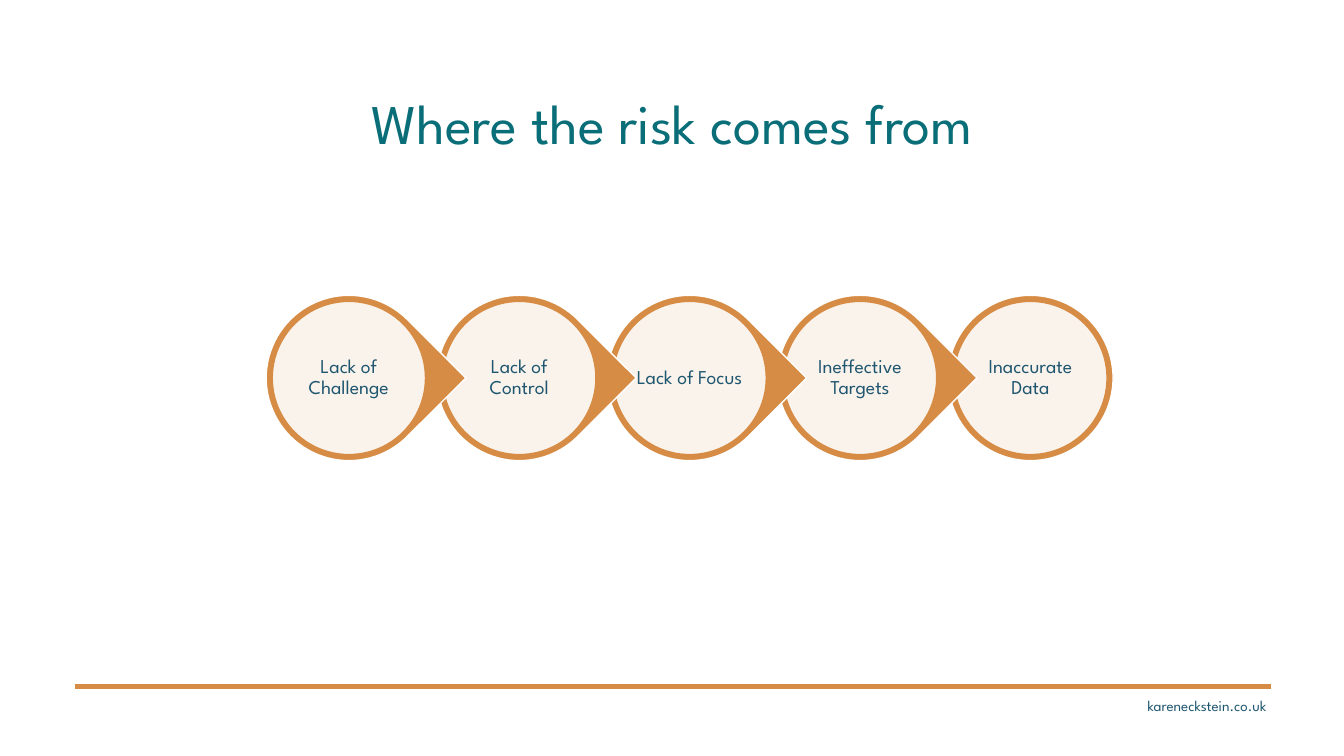
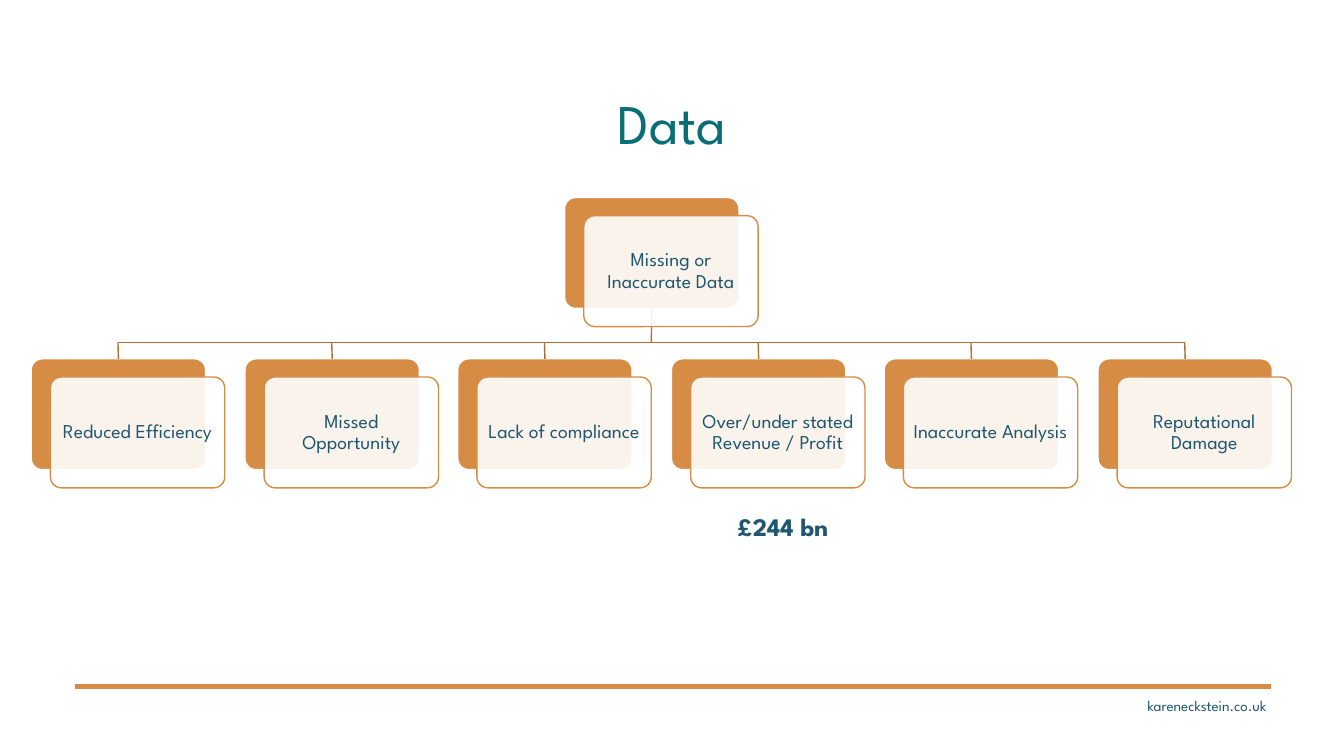
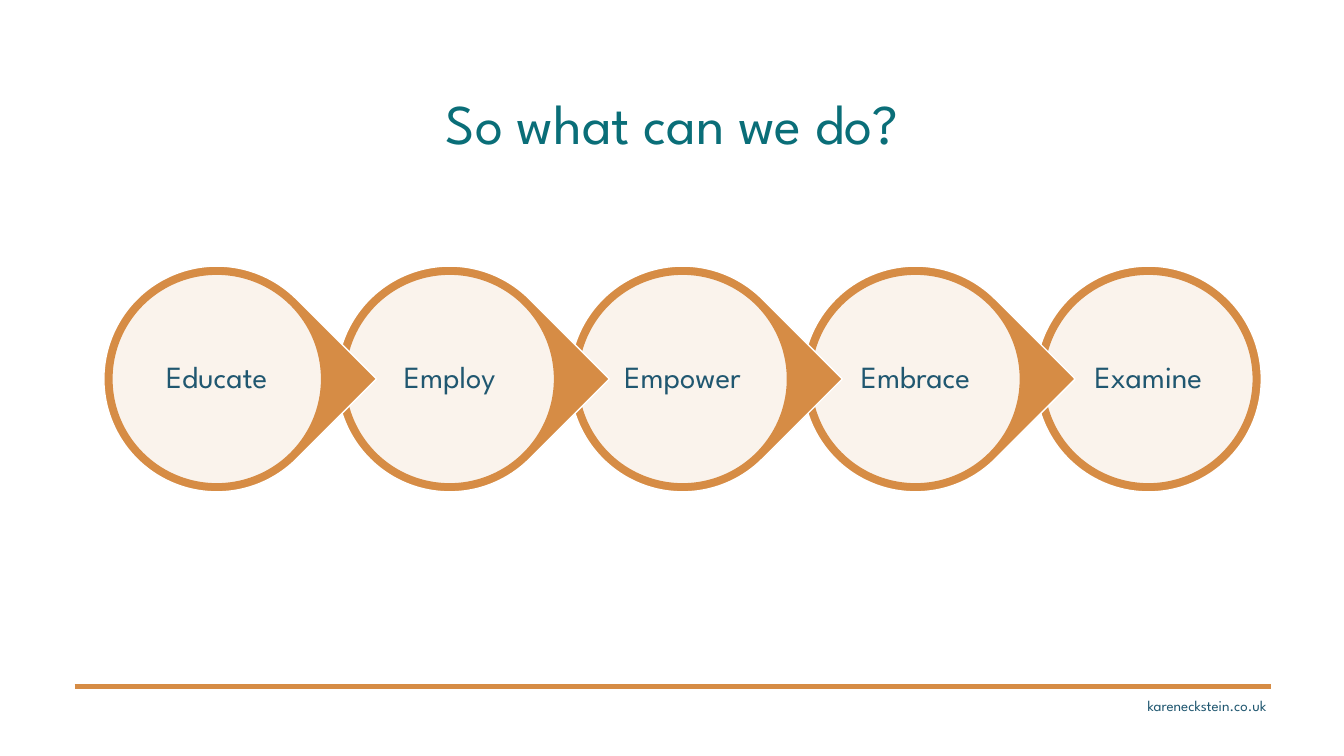
from lxml import etree
from pptx import Presentation
from pptx.dml.color import RGBColor
from pptx.enum.shapes import MSO_CONNECTOR, MSO_SHAPE
from pptx.enum.text import MSO_ANCHOR, MSO_AUTO_SIZE, PP_ALIGN
from pptx.oxml.ns import qn
from pptx.util import Pt

PX = 9144  # EMU: one hundredth of an inch
FONT = "League Spartan"
ORANGE = RGBColor(0xD6, 0x8C, 0x45)
BROWN = RGBColor(0xAB, 0x70, 0x37)
NAVY = RGBColor(0x20, 0x57, 0x70)
TEAL = RGBColor(0x0A, 0x6E, 0x78)
WHITE = RGBColor(0xFF, 0xFF, 0xFF)

ELLIPSE = MSO_SHAPE.OVAL
TEARDROP = MSO_SHAPE.TEAR
ROUNDED = MSO_SHAPE.ROUNDED_RECTANGLE
STRAIGHT = MSO_CONNECTOR.STRAIGHT
CENTER, RIGHT = PP_ALIGN.CENTER, PP_ALIGN.RIGHT
TOP, MIDDLE, BOTTOM = MSO_ANCHOR.TOP, MSO_ANCHOR.MIDDLE, MSO_ANCHOR.BOTTOM
NO_AUTOFIT = MSO_AUTO_SIZE.NONE

TITLE_ONLY = 5
TOP_SIDE, BOTTOM_SIDE = 0, 2


class Deck:
    """Holds the presentation style and the slide being drawn."""

    def __init__(self):
        self.presentation = Presentation()
        self.presentation.slide_width = 1333 * PX
        self.presentation.slide_height = 750 * PX
        self.slide = None

    def new_slide(self, title):
        layout = self.presentation.slide_layouts[TITLE_ONLY]
        self.slide = self.presentation.slides.add_slide(layout)
        self.line(74, 681, 1261, 681, ORANGE, 3)
        self.text_box(1101, 686, 165, 28, "kareneckstein.co.uk", 10.7, RIGHT)
        shape = self.slide.shapes.title
        shape.left, shape.top = 72 * PX, 112 * PX
        shape.width, shape.height = 1189 * PX, 48 * PX
        self.set_text(shape, title, 40, color=TEAL, anchor=BOTTOM, spacing=0.9)

    def set_text(self, shape, text, size, align=CENTER, color=NAVY, bold=False,
                 anchor=TOP, spacing=1.0):
        frame = shape.text_frame
        frame.word_wrap = True
        frame.auto_size = NO_AUTOFIT
        frame.vertical_anchor = anchor
        frame.text = text
        paragraph = frame.paragraphs[0]
        paragraph.alignment = align
        paragraph.line_spacing = spacing
        font = paragraph.font
        font.name, font.size, font.bold = FONT, Pt(size), bold
        font.color.rgb = color

    def text_box(self, left, top, width, height, text, size, align=CENTER, bold=False):
        box = self.slide.shapes.add_textbox(left * PX, top * PX, width * PX, height * PX)
        self.set_text(box, text, size, align, bold=bold)

    def line(self, x1, y1, x2, y2, color=BROWN, width=1):
        connector = self.slide.shapes.add_connector(
            STRAIGHT, x1 * PX, y1 * PX, x2 * PX, y2 * PX)
        connector.line.color.rgb = color
        connector.line.width = Pt(width)
        etree.SubElement(connector._element.spPr, qn("a:effectLst"))
        return connector

    def shape(self, kind, left, top, width, height, fill, outline):
        shape = self.slide.shapes.add_shape(
            kind, left * PX, top * PX, width * PX, height * PX)
        shape.shadow.inherit = False
        shape.fill.solid()
        shape.fill.fore_color.rgb = fill
        shape.line.color.rgb = outline
        shape.line.width = Pt(1)
        if kind == ROUNDED:
            shape.adjustments[0] = 0.1
        return shape

    def backing(self, kind, left, top, width, height):
        return self.shape(kind, left, top, width, height, ORANGE, WHITE)

    def face(self, kind, left, top, width, height, text, size, inset):
        """Draw a nearly opaque white shape that carries a label."""
        shape = self.shape(kind, left, top, width, height, WHITE, ORANGE)
        color = shape._element.spPr.find(f"{qn('a:solidFill')}/{qn('a:srgbClr')}")
        etree.SubElement(color, qn("a:alpha"), val="90000")
        frame = shape.text_frame
        frame.margin_left = frame.margin_right = inset * PX
        frame.margin_top = frame.margin_bottom = inset * PX
        self.set_text(shape, text, size, anchor=MIDDLE, spacing=0.9)

    def chain(self, labels, left, top, diameter, pitch, size):
        """Draw circles from right to left, each but the last pointing onwards."""
        rim = round(diameter / 28)
        inner = diameter - 2 * rim
        last = len(labels) - 1
        for index in range(last, -1, -1):
            x = left + index * pitch
            kind = ELLIPSE if index == last else TEARDROP
            drop = self.backing(kind, x, top, diameter, diameter)
            if kind == TEARDROP:
                drop.rotation = 45
            self.face(ELLIPSE, x + rim, top + rim, inner, inner, labels[index], size, 0)

    def tree(self, root, children, left, top, span, child_top):
        """Draw a root card centred over a row of child cards."""
        width, height, bar_y = 173, 110, 340
        gaps = len(children) - 1
        root_left = left + span // 2
        child_lefts = [left + round(span * index / gaps) for index in range(len(children))]
        cards = [(root_left, top, root)]
        cards += [(x, child_top, label) for x, label in zip(child_lefts, children)]
        backings = [self.backing(ROUNDED, x, y, width, height) for x, y, _ in cards]

        half = width // 2
        trunk = self.line(root_left + half, top + height, root_left + half, bar_y)
        trunk.begin_connect(backings[0], BOTTOM_SIDE)
        self.line(left + half, bar_y, left + span + half, bar_y)
        for x, backing in zip(child_lefts, backings[1:]):
            branch = self.line(x + half, bar_y, x + half, child_top)
            branch.end_connect(backing, TOP_SIDE)

        for x, y, label in cards:
            self.face(ROUNDED, x + 19, y + 18, width, height, label, 14, 6)


def main():
    deck = Deck()

    deck.new_slide("Where the risk comes from")
    risks = ["Lack of Challenge", "Lack of Control", "Lack of Focus",
             "Ineffective Targets", "Inaccurate Data"]
    deck.chain(risks, left=264, top=293, diameter=164, pitch=169, size=14)

    deck.new_slide("Data")
    effects = ["Reduced Efficiency", "Missed Opportunity", "Lack of compliance",
               "Over/under stated Revenue / Profit", "Inaccurate Analysis",
               "Reputational Damage"]
    deck.tree("Missing or Inaccurate Data", effects,
              left=31, top=196, span=1058, child_top=356)
    deck.text_box(715, 502, 123, 40, "£244 bn", 18, bold=True)

    deck.new_slide("So what can we do?")
    actions = ["Educate", "Employ", "Empower", "Embrace", "Examine"]
    deck.chain(actions, left=103, top=264, diameter=224, pitch=231, size=22)

    deck.presentation.save("out.pptx")


if __name__ == "__main__":
    main()
